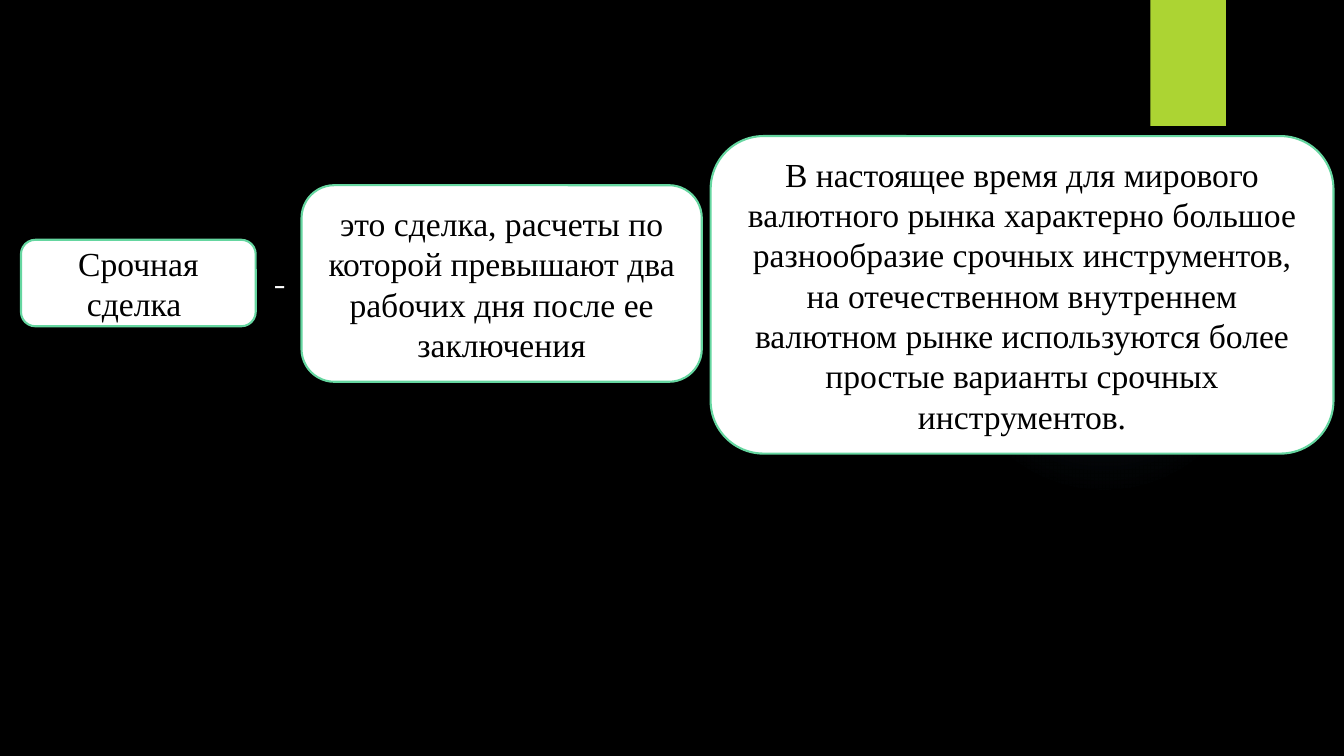
from lxml import etree
from pptx import Presentation
from pptx.dml.color import RGBColor
from pptx.enum.shapes import MSO_SHAPE
from pptx.enum.text import MSO_ANCHOR, MSO_AUTO_SIZE, PP_ALIGN
from pptx.oxml.ns import qn
from pptx.util import Inches, Pt

RECT = MSO_SHAPE.RECTANGLE
ROUNDED = MSO_SHAPE.ROUNDED_RECTANGLE
OVAL = MSO_SHAPE.OVAL
MIDDLE = MSO_ANCHOR.MIDDLE
CENTER = PP_ALIGN.CENTER
GROW = MSO_AUTO_SIZE.SHAPE_TO_FIT_TEXT

COLS, ROWS = 160, 90
CELL = Inches(1) / 12


def rgb(value):
    return RGBColor.from_string(value)


def grid(*cells):
    return [round(n * CELL) for n in cells]


class Deck:
    black, white = "000000", "FFFFFF"
    lime, mint, sky = "ACD433", "65D6A0", "7AC4F0"
    serif, sans = "Times New Roman", "TeX Gyre Adventor"
    size = 24

    def __init__(self, prs):
        self.s = prs.slides.add_slide(prs.slide_layouts[6])
        fill = self.s.background.fill
        fill.solid()
        fill.fore_color.rgb = rgb(self.black)

    def shape(self, kind, at, color):
        sp = self.s.shapes.add_shape(kind, *grid(*at))
        sp.shadow.inherit = False
        sp.fill.solid()
        sp.fill.fore_color.rgb = rgb(color)
        sp.line.fill.background()
        return sp

    def glow(self, at, stops):
        sp = self.shape(OVAL, at, self.sky)
        solid = sp.element.spPr.find(qn("a:solidFill"))
        grad = etree.Element(qn("a:gradFill"), rotWithShape="1")
        stop_list = etree.SubElement(grad, qn("a:gsLst"))
        for position, opacity in stops:
            gs = etree.SubElement(stop_list, qn("a:gs"), pos=str(position * 1000))
            color = etree.SubElement(gs, qn("a:srgbClr"), val=self.sky)
            etree.SubElement(color, qn("a:alpha"), val=str(opacity * 1000))
        radial = etree.SubElement(grad, qn("a:path"), {"path": "circle"})
        etree.SubElement(radial, qn("a:fillToRect"),
                         l="50000", t="50000", r="50000", b="50000")
        solid.getparent().replace(solid, grad)

    def add_text(self, tf, text, font, color):
        tf.word_wrap = True
        p = tf.paragraphs[0]
        r = p.add_run()
        r.text = text
        r.font.name = font
        r.font.size = Pt(self.size)
        r.font.color.rgb = rgb(color)
        return p

    def card(self, at, text):
        sp = self.shape(ROUNDED, at, self.white)
        sp.line.color.rgb = rgb(self.mint)
        sp.line.width = Pt(1.5)
        tf = sp.text_frame
        tf.vertical_anchor = MIDDLE
        self.add_text(tf, text, self.serif, self.black).alignment = CENTER

    def label(self, at, text):
        tf = self.s.shapes.add_textbox(*grid(*at)).text_frame
        tf.auto_size = GROW
        self.add_text(tf, text, self.sans, self.white)


def main():
    prs = Presentation()
    prs.slide_width, prs.slide_height = grid(COLS, ROWS)
    deck = Deck(prs)
    deck.glow((112.9, 22, 37, 37), [(0, 7), (36, 6), (69, 0)])
    deck.shape(RECT, (136.95, 0, 9, 15), deck.lime)
    deck.card((2.5, 28.55, 27.95, 10.3), "Срочная сделка ")
    deck.label((31.45, 30.7, 3.35, 6), "-")
    deck.card((35.9, 22.05, 47.65, 23.4),
              "это сделка, расчеты по которой превышают два "
              "рабочих дня после ее заключения")
    deck.card((84.6, 16.2, 74.15, 37.8),
              "В настоящее время для мирового валютного рынка характерно "
              "большое разнообразие срочных инструментов, на отечественном "
              "внутреннем валютном рынке используются более простые "
              "варианты срочных инструментов.")
    prs.save("out.pptx")


if __name__ == "__main__":
    main()
